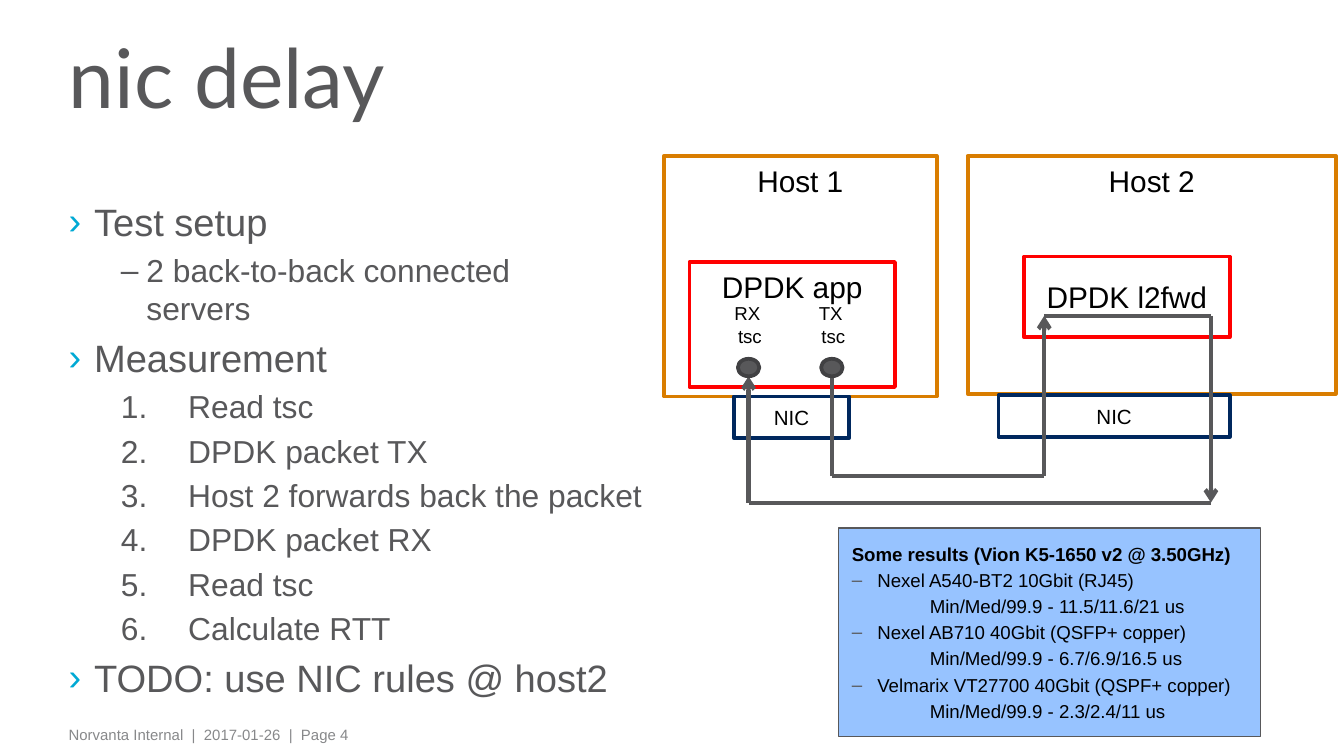
from itertools import pairwise

from lxml import etree
from pptx import Presentation
from pptx.dml import color
from pptx.enum import shapes, text
from pptx.oxml import ns
from pptx.util import Inches, Pt

GREY = "58585A"
BLACK = "000000"
WHITE = "FFFFFF"
ORANGE = "D97D00"
RED = "FF0000"
NAVY = "00285E"
CYAN = "00A9D4"
RECT = shapes.MSO_SHAPE.RECTANGLE
OVAL = shapes.MSO_SHAPE.OVAL
LEFT, MID = text.PP_ALIGN.LEFT, text.PP_ALIGN.CENTER
TOP, CORE = text.MSO_ANCHOR.TOP, text.MSO_ANCHOR.MIDDLE

STEPS = ["Read tsc", "DPDK packet TX", "Host 2 forwards back the packet",
         "DPDK packet RX", "Read tsc", "Calculate RTT"]
CARDS = [("Nexel A540-BT2 10Gbit (RJ45)", "11.5/11.6/21"),
         ("Nexel AB710 40Gbit (QSFP+ copper)", "6.7/6.9/16.5"),
         ("Velmarix VT27700 40Gbit (QSPF+ copper)", "2.3/2.4/11")]


def rgb(code):
    return color.RGBColor.from_string(code)


def place(item, x, y, w, h):
    item.left, item.top = Inches(x), Inches(y)
    item.width, item.height = Inches(w), Inches(h)


def setup(frame, anchor=TOP, side=0.1, edge=0.05, wrap=True):
    frame.word_wrap = wrap
    frame.vertical_anchor = anchor
    frame.margin_left = frame.margin_right = Inches(side)
    frame.margin_top = frame.margin_bottom = Inches(edge)


def style(para, size, tone, align=LEFT, bold=False, face="Arial"):
    para.alignment = align
    font = para.font
    font.size, font.bold, font.name = Pt(size), bold, face
    font.color.rgb = rgb(tone)


def mark(para, sign, tone):
    props = para._p.get_or_add_pPr()
    hue = etree.SubElement(props, ns.qn("a:buClr"))
    etree.SubElement(hue, ns.qn("a:srgbClr")).set("val", tone)
    if sign == "1.":
        etree.SubElement(props, ns.qn("a:buFont")).set("typeface", "+mj-lt")
        etree.SubElement(props, ns.qn("a:buAutoNum")).set("type", "arabicPeriod")
    else:
        etree.SubElement(props, ns.qn("a:buFont")).set("typeface", "Arial")
        etree.SubElement(props, ns.qn("a:buChar")).set("char", sign)


def fill_list(frame, rows):
    for i, (words, level, size, tone, sign, hue, left, hang, bold) in enumerate(rows):
        para = frame.add_paragraph() if i else frame.paragraphs[0]
        para.text = words
        para.level = level
        props = para._p.get_or_add_pPr()
        props.set("marL", str(Inches(left)))
        props.set("indent", str(Inches(-hang)))
        if sign:
            mark(para, sign, hue)
        if i:
            para.space_before = Pt(round(size * 0.2, 1))
        style(para, size, tone, bold=bold)


def add_text(slide, at, words, size, tone, align=LEFT, side=0.1, wrap=True):
    box = slide.shapes.add_textbox(*map(Inches, at))
    setup(box.text_frame, side=side, wrap=wrap)
    para = box.text_frame.paragraphs[0]
    para.text = words
    style(para, size, tone, align)


def add_box(slide, at, fill, line, width=2, words="", size=16, anchor=TOP, kind=RECT):
    box = slide.shapes.add_shape(kind, *map(Inches, at))
    box.shadow.inherit = False
    box.fill.solid()
    box.fill.fore_color.rgb = rgb(fill)
    box.line.color.rgb = rgb(line)
    box.line.width = Pt(width)
    setup(box.text_frame, anchor)
    if words:
        para = box.text_frame.paragraphs[0]
        para.text = words
        style(para, size, BLACK, MID)
    return box


def add_line(slide, start, end, arrow):
    line = slide.shapes.add_connector(
        shapes.MSO_CONNECTOR.STRAIGHT, *map(Inches, start + end))
    line.line.color.rgb = rgb(GREY)
    line.line.width = Pt(2.25)
    if arrow:
        tip = etree.SubElement(line.line._get_or_add_ln(), ns.qn("a:tailEnd"))
        tip.set("type", "arrow")
    etree.SubElement(line._element.spPr, ns.qn("a:effectLst"))


def add_title(slide):
    title = slide.shapes.title
    place(title, 0.43, 0.2, 8.2, 0.89)
    setup(title.text_frame, CORE, 0.08, 0)
    para = title.text_frame.paragraphs[0]
    para.text = "nic delay"
    para.line_spacing = 0.75
    style(para, 44, GREY, face="Lato")


def add_body(slide):
    def head(words):
        return words, 0, 20.4, GREY, "›", CYAN, 0.19, 0.19, False

    def sub(words, sign, left, hang):
        return words, 1, 17, GREY, sign, GREY, left, hang, False

    box = slide.shapes.add_textbox(*map(Inches, (0.43, 1.48, 4.49, 3.62)))
    setup(box.text_frame, side=0.08, edge=0)
    rows = [head("Test setup"),
            sub("2 back-to-back connected \vservers", "–", 0.58, 0.19),
            head("Measurement")]
    rows += [sub(step, "1.", 0.89, 0.5) for step in STEPS]
    rows.append(head("TODO: use NIC rules @ host2"))
    fill_list(box.text_frame, rows)


def add_hosts(slide):
    for at, line, words, size, anchor in [
            ((4.94, 1.16, 2.03, 1.79), ORANGE, "Host 1", 16, TOP),
            ((5.13, 1.95, 1.53, 0.93), RED, "DPDK app", 16, TOP),
            ((7.2, 1.16, 2.74, 1.77), ORANGE, "Host 2", 16, TOP),
            ((7.43, 2.94, 1.72, 0.31), NAVY, "NIC", 11, CORE),
            ((7.62, 1.91, 1.53, 0.6), RED, "DPDK l2fwd", 16, CORE),
            ((5.46, 2.95, 0.86, 0.31), NAVY, "NIC", 11, CORE)]:
        add_box(slide, at, WHITE, line, 2, words, size, anchor)


def add_route(slide):
    route = [(6.19, 2.8), (6.19, 3.54), (7.77, 3.54), (7.77, 2.35),
             (9.01, 2.35), (9.01, 3.74), (5.57, 3.74), (5.57, 2.8)]
    tips = {2, 4, 6}
    for i, (start, end) in enumerate(pairwise(route)):
        add_line(slide, start, end, i in tips)
    for x, name in [(6.19, "TX"), (5.57, "RX")]:
        add_box(slide, (x - 0.08, 2.67, 0.16, 0.13), GREY, "414143", kind=OVAL)
        add_text(slide, (x - 0.21, 2.2, 0.44, 0.45), name + " \vtsc", 10,
                 BLACK, MID, wrap=False)


def add_results(slide):
    box = add_box(slide, (6.24, 3.93, 3.14, 1.55), "97C3FF", GREY, 0.75, anchor=CORE)
    rows = [("Some results (Vion K5-1650 v2 @ 3.50GHz)", 1, 10, BLACK,
             None, None, 0, 0, True)]
    for card, times in CARDS:
        rows.append((card, 1, 10, BLACK, "–", GREY, 0.19, 0.19, False))
        rows.append((f"Min/Med/99.9 - {times} us", 2, 10, BLACK,
                     None, None, 0.58, 0, False))
    fill_list(box.text_frame, rows)


def main():
    deck = Presentation()
    deck.slide_width = Inches(10)
    deck.slide_height = deck.slide_width * 9 // 16
    slide = deck.slides.add_slide(deck.slide_layouts[5])
    add_text(slide, (0.43, 5.35, 8.09, 0.18),
             "Norvanta Internal  |  2017-01-26  |  Page 4", 8, "87888A", side=0.08)
    add_body(slide)
    add_title(slide)
    add_hosts(slide)
    add_route(slide)
    add_results(slide)
    deck.save("out.pptx")


if __name__ == "__main__":
    main()
